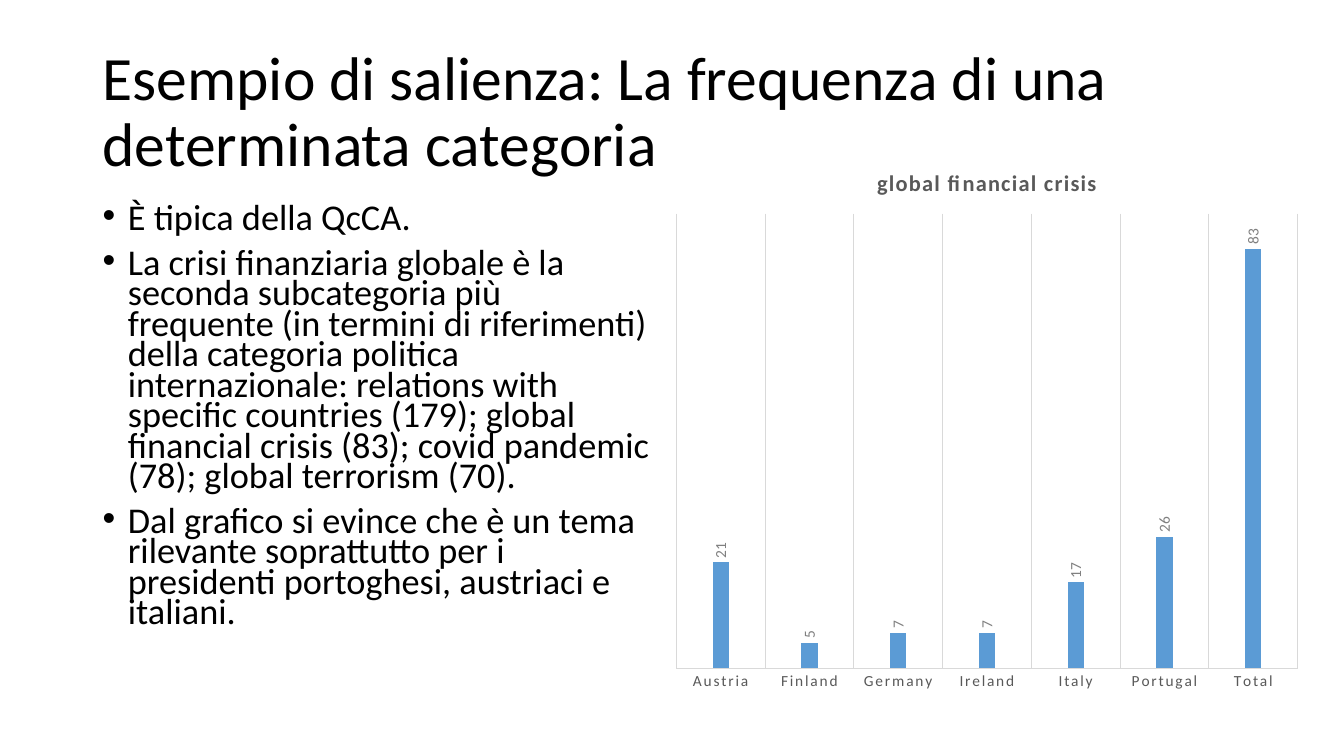
"""Build a slide with a title, three bullet points and a column chart of category frequencies."""
from pptx import Presentation, util as u
from pptx.chart.data import CategoryChartData
from pptx.dml.color import RGBColor
from pptx.enum import chart as ch, text
from pptx.oxml import parse_xml
from pptx.oxml.ns import nsdecls, qn

TITLE = "Esempio di salienza: La frequenza di una determinata categoria"
BULLETS = [
    "È tipica della QcCA.",
    "La crisi finanziaria globale è la seconda subcategoria più frequente (in termini di "
    "riferimenti) della categoria politica internazionale: relations with specific countries "
    "(179); global financial crisis (83); covid pandemic (78); global terrorism (70).",
    "Dal grafico si evince che è un tema rilevante soprattutto per i presidenti portoghesi, "
    "austriaci e italiani.",
]
SERIES = "global financial crisis"
COUNTS = {"Austria": 21, "Finland": 5, "Germany": 7, "Ireland": 7,
          "Italy": 17, "Portugal": 26, "Total": 83}

BOXES = {"title": (0.92, 0.4, 11.5, 1.45), "body": (0.92, 2, 5.67, 4.76),
         "chart": (6.58, 1.46, 6.42, 5.5)}
PLOT = {"x": 0.02, "y": 0.12, "w": 0.96, "h": 0.82}
THEME = {
    "font": "Calibri",
    "ink": "000000", "axis": "595959", "label": "808080", "grid": "D9D9D9", "bar": "5B9BD5",
    "title": 44, "body": 25.9, "chart_title": 16, "chart_text": 11,
}


def color(name):
    return RGBColor.from_string(THEME[name])


def style(font, size, ink, bold=False):
    font.name, font.size, font.bold = THEME["font"], u.Pt(THEME[size]), bold
    font.color.rgb = color(ink)


def place(name):
    return [u.Inches(v) for v in BOXES[name]]


def add_text(s, name, paragraphs, spacing, anchor, bullet=False):
    tf = s.shapes.add_textbox(*place(name)).text_frame
    tf.word_wrap, tf.vertical_anchor = True, anchor
    for i, words in enumerate(paragraphs):
        p = tf.paragraphs[0] if i == 0 else tf.add_paragraph()
        p.line_spacing = spacing
        if bullet:
            pPr = p._p.get_or_add_pPr()
            indent = u.Inches(0.25)
            pPr.set("marL", str(indent))
            pPr.set("indent", str(-indent))
            pPr.append(parse_xml(f'<a:buFont {nsdecls("a")} typeface="Arial"/>'))
            pPr.append(parse_xml(f'<a:buChar {nsdecls("a")} char="•"/>'))
            p.space_before = u.Pt(10 if i else 0)
        r = p.add_run()
        r.text = words
        style(r.font, name, "ink")


def thin_line(line):
    line.color.rgb, line.width = color("grid"), u.Pt(0.75)


def add_chart(s):
    data = CategoryChartData()
    data.categories = list(COUNTS)
    data.add_series(SERIES, list(COUNTS.values()))
    chart = s.shapes.add_chart(ch.XL_CHART_TYPE.COLUMN_CLUSTERED, *place("chart"), data).chart
    style(chart.font, "chart_text", "ink")
    chart.has_legend = False

    chart.has_title = True
    r = chart.chart_title.text_frame.paragraphs[0].add_run()
    r.text = SERIES
    style(r.font, "chart_title", "axis", True)
    r.font._rPr.set("spc", "100")
    chart.chart_title.include_in_layout = False

    cat = chart.category_axis
    cat.major_tick_mark = cat.minor_tick_mark = ch.XL_TICK_MARK.NONE
    cat.has_major_gridlines = True
    thin_line(cat.major_gridlines.format.line)
    thin_line(cat.format.line)
    style(cat.tick_labels.font, "chart_text", "axis")
    cat.tick_labels.font._rPr.set("spc", "120")

    val = chart.value_axis
    val.has_major_gridlines = val.visible = False
    val.minimum_scale, val.maximum_scale = 0, 90

    plot = chart.plots[0]
    plot.gap_width, plot.overlap, plot.vary_by_categories = 444, -90, False
    bars = plot.series[0]
    bars.format.fill.solid()
    bars.format.fill.fore_color.rgb = color("bar")
    labels = bars.data_labels
    labels.show_value, labels.position = True, ch.XL_LABEL_POSITION.OUTSIDE_END
    style(labels.font, "chart_text", "label")
    body = labels._element.find(qn("c:txPr")).find(qn("a:bodyPr"))
    body.set("rot", "-5400000")
    body.set("vert", "horz")

    area = chart._chartSpace.chart.plotArea
    for old in area.findall(qn("c:layout")):
        area.remove(old)
    sizes = "".join(f'<c:{k} val="{v}"/>' for k, v in PLOT.items())
    area.insert(0, parse_xml(
        f'<c:layout {nsdecls("c")}><c:manualLayout><c:layoutTarget val="inner"/>'
        f'<c:xMode val="edge"/><c:yMode val="edge"/>{sizes}</c:manualLayout></c:layout>'))


def main():
    prs = Presentation()
    prs.slide_width, prs.slide_height = u.Inches(13.33), u.Inches(7.5)
    s = prs.slides.add_slide(prs.slide_layouts[6])
    add_text(s, "title", [TITLE], 0.9, text.MSO_ANCHOR.MIDDLE)
    add_text(s, "body", BULLETS, 0.7, text.MSO_ANCHOR.TOP, bullet=True)
    add_chart(s)
    prs.save("out.pptx")


if __name__ == "__main__":
    main()
